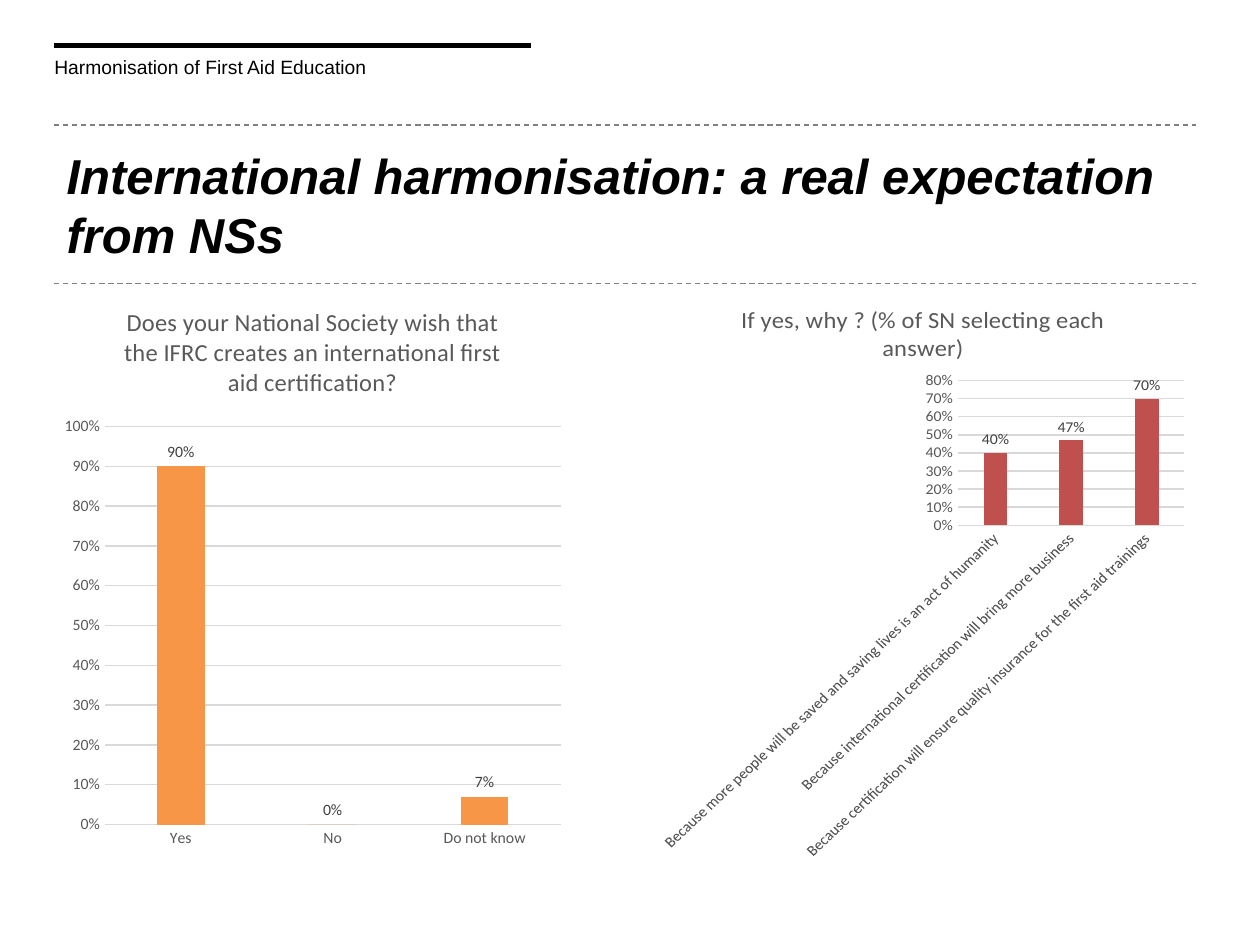
from pptx import Presentation
from pptx.chart.data import CategoryChartData
from pptx.dml.color import RGBColor
from pptx.enum.chart import XL_CHART_TYPE, XL_LABEL_POSITION, XL_TICK_MARK
from pptx.enum.dml import MSO_LINE
from pptx.enum.shapes import MSO_CONNECTOR
from pptx.enum.text import MSO_ANCHOR
from pptx.oxml.ns import qn
from pptx.util import Pt
from lxml import etree

COLUMNS = XL_CHART_TYPE.COLUMN_CLUSTERED
OUTSIDE_END = XL_LABEL_POSITION.OUTSIDE_END
NO_TICKS = XL_TICK_MARK.NONE
STRAIGHT = MSO_CONNECTOR.STRAIGHT
DASH = MSO_LINE.DASH
MIDDLE = MSO_ANCHOR.MIDDLE

COLORS = {
    "text": "000000",
    "rule": "808080",
    "chart_text": "595959",
    "label": "404040",
    "grid": "D9D9D9",
    "wish": "F79646",
    "reason": "C0504D",
}
LEFT, RIGHT = 31, 683.3
SLANTED = -45 * 60000


def color(name):
    return RGBColor.from_string(COLORS[name])


def style_font(font, face, size, color_name, bold=False, italic=False):
    font.name = face
    font.size = Pt(size)
    font.bold = bold
    font.italic = italic
    font.color.rgb = color(color_name)


def add_rule(page, left, right, top, color_name, width, dash=None):
    rule = page.shapes.add_connector(STRAIGHT, Pt(left), Pt(top), Pt(right), Pt(top))
    rule.line.color.rgb = color(color_name)
    rule.line.width = Pt(width)
    if dash:
        rule.line.dash_style = dash
    etree.SubElement(rule._element.spPr, qn("a:effectLst"))


def add_text(page, left, top, width, height, text):
    box = page.shapes.add_textbox(Pt(left), Pt(top), Pt(width), Pt(height))
    box.text_frame.word_wrap = True
    box.text_frame.text = text
    return box.text_frame


def add_header(page, left, top, width):
    add_rule(page, left, left + width, top, "text", 3)
    frame = add_text(page, left, top + 5.6, width, 13.5,
                     "Harmonisation of First Aid Education")
    frame.margin_left = frame.margin_right = 0
    frame.margin_top = frame.margin_bottom = 0
    style_font(frame.paragraphs[0].font, "Arial", 11, "text")


def add_title_band(page, left, top, width, height):
    for rule_top in (top, top + height):
        add_rule(page, left, left + width, rule_top, "rule", 0.75, DASH)
    frame = add_text(page, left, top, width, height,
                     "International harmonisation: a real expectation from NSs")
    frame.vertical_anchor = MIDDLE
    style_font(frame.paragraphs[0].font, "Arial", 28, "text", bold=True, italic=True)


def add_survey_chart(page, left, top, width, height, question, answers,
                     bar_color, maximum, label_rotation=None):
    data = CategoryChartData(number_format="0%")
    data.categories = list(answers)
    data.add_series(question, list(answers.values()))
    chart = page.shapes.add_chart(
        COLUMNS, Pt(left), Pt(top), Pt(width), Pt(height), data).chart
    style_font(chart.font, "Calibri", 10, "text")
    chart.has_legend = False

    chart.has_title = True
    chart.chart_title.include_in_layout = False
    heading = chart.chart_title.text_frame
    heading.text = question
    style_font(heading.paragraphs[0].font, "Calibri", 14, "chart_text")

    for axis in (chart.category_axis, chart.value_axis):
        axis.major_tick_mark = axis.minor_tick_mark = NO_TICKS
        style_font(axis.tick_labels.font, "Calibri", 9, "chart_text")
    value_axis, category_axis = chart.value_axis, chart.category_axis
    value_axis.minimum_scale = 0
    value_axis.maximum_scale = maximum
    value_axis.major_unit = 0.1
    value_axis.tick_labels.number_format = "0%"
    value_axis.tick_labels.number_format_is_linked = False
    value_axis.format.line.fill.background()
    for line in (value_axis.major_gridlines.format.line, category_axis.format.line):
        line.color.rgb = color("grid")
        line.width = Pt(0.75)
    if label_rotation is not None:
        body = category_axis._element.find(qn("c:txPr")).find(qn("a:bodyPr"))
        body.set("rot", str(label_rotation))
        body.set("vert", "horz")

    plot = chart.plots[0]
    plot.vary_by_categories = False
    plot.gap_width = 219
    plot.overlap = -27
    bars = plot.series[0]
    bars.format.fill.solid()
    bars.format.fill.fore_color.rgb = color(bar_color)
    labels = bars.data_labels
    labels.show_value = True
    labels.position = OUTSIDE_END
    labels.number_format = "0%"
    labels.number_format_is_linked = False
    style_font(labels.font, "Calibri", 9, "label")


def main():
    deck = Presentation()
    deck.slide_width, deck.slide_height = Pt(720), Pt(540)
    page = deck.slides.add_slide(deck.slide_layouts[6])
    add_header(page, LEFT, 26, 272.2)
    add_title_band(page, LEFT, 71.5, RIGHT - LEFT, 90.5)

    chart_top, chart_height = 161.3, 329.8
    add_survey_chart(
        page, LEFT, chart_top, 295.2, chart_height,
        "Does your National Society wish that the IFRC creates an "
        "international first aid certification?",
        {"Yes": 0.9, "No": 0, "Do not know": 0.07},
        "wish", 1)
    reason_width = 311.8
    add_survey_chart(
        page, RIGHT - reason_width, chart_top, reason_width, chart_height,
        "If yes, why ? (% of SN selecting each answer)",
        {
            "Because more people will be saved and saving lives "
            "is an act of humanity": 0.4,
            "Because international certification will bring more business": 0.47,
            "Because certification will ensure quality insurance "
            "for the first aid trainings": 0.7,
        },
        "reason", 0.8, SLANTED)
    deck.save("out.pptx")


if __name__ == "__main__":
    main()
